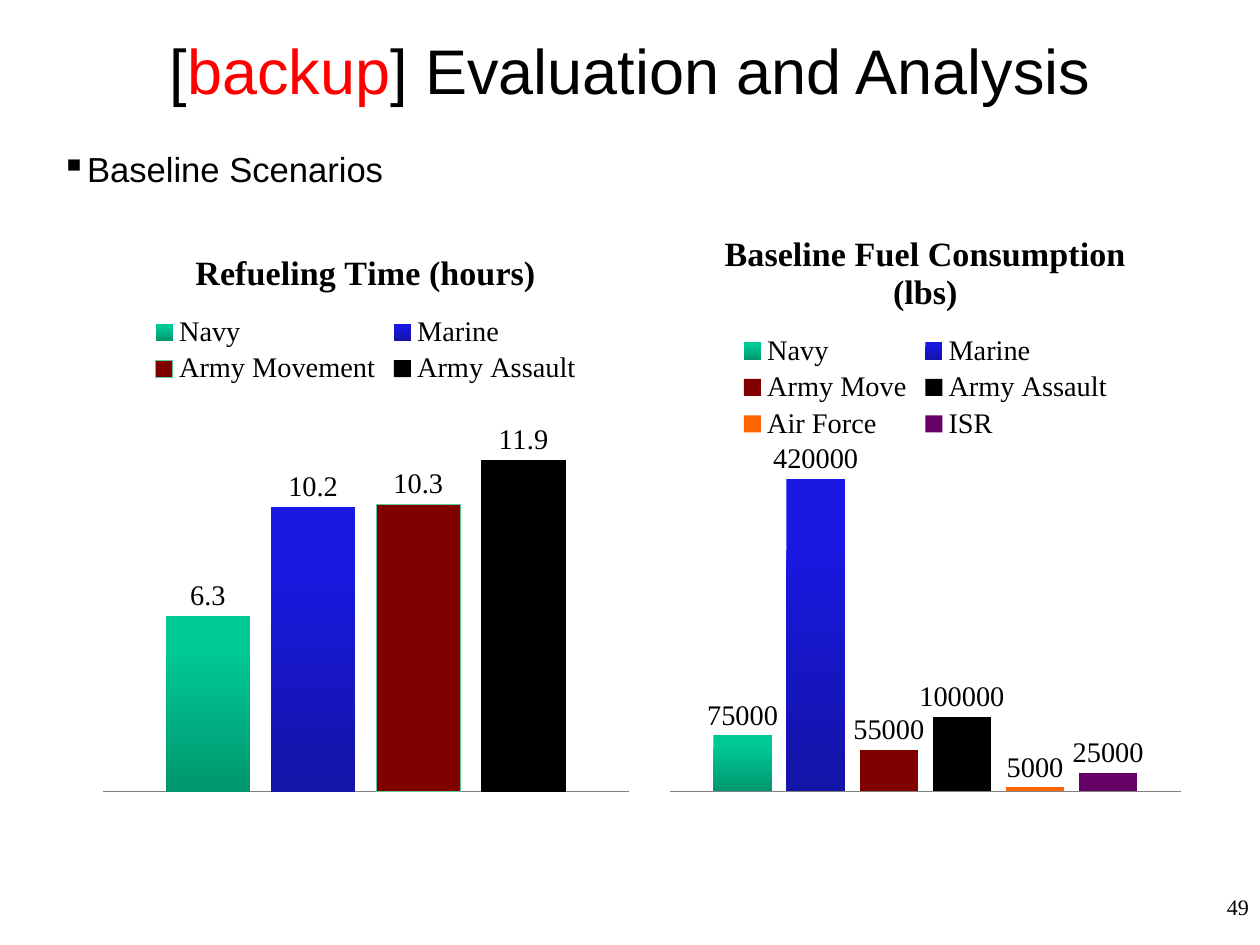
from lxml.etree import SubElement
from pptx import Presentation
from pptx.chart.data import CategoryChartData
from pptx.dml.color import RGBColor
from pptx.enum.chart import (XL_CHART_TYPE, XL_LABEL_POSITION, XL_LEGEND_POSITION,
                             XL_TICK_LABEL_POSITION, XL_TICK_MARK)
from pptx.enum.text import MSO_ANCHOR, MSO_AUTO_SIZE, PP_ALIGN
from pptx.oxml.ns import qn
from pptx.util import Emu, Pt

SANS, SERIF = "Arial", "Times New Roman"
BLACK, RED, AXIS_GRAY, OUTLINE_GREEN = "000000", "FF0000", "808080", "60C99C"
# One colour is a solid fill; two run from the top of the column to its foot
NAVY, MARINE = ("00C896", "00966E"), ("1818E2", "1414A6")
MAROON, ORANGE, PURPLE = ("800000",), ("FF6600",), ("660066",)

REFUELING = [("Navy", 6.3, NAVY), ("Marine", 10.2, MARINE),
             ("Army Movement", 10.3, MAROON), ("Army Assault", 11.9, (BLACK,))]
FUEL = [("Navy", 75000, NAVY), ("Marine", 420000, MARINE),
        ("Army Move", 55000, MAROON), ("Army Assault", 100000, (BLACK,)),
        ("Air Force", 5000, ORANGE), ("ISR", 25000, PURPLE)]


def px(length):
    """100 px to the inch."""
    return Emu(length * 9144)


def color(hex_code):
    return RGBColor.from_string(hex_code)


def style_font(font, face, size, hex_code=BLACK, bold=False):
    font.name, font.size, font.bold = face, Pt(size), bold
    font.color.rgb = color(hex_code)


def add_run(paragraph, text, face, size, hex_code=BLACK):
    run = paragraph.add_run()
    run.text = text
    style_font(run.font, face, size, hex_code)


def set_frame(shape, box, inset_x=0, inset_y=0):
    shape.left, shape.top, shape.width, shape.height = map(px, box)
    frame = shape.text_frame
    frame.margin_left = frame.margin_right = px(inset_x)
    frame.margin_top = frame.margin_bottom = px(inset_y)
    frame.word_wrap = True
    frame.auto_size = MSO_AUTO_SIZE.NONE
    frame.vertical_anchor = MSO_ANCHOR.TOP
    return frame.paragraphs[0]


def add_text(slide, box, **insets):
    return set_frame(slide.shapes.add_textbox(*map(px, box)), box, **insets)


def add_bullet(paragraph, symbol):
    SubElement(paragraph._p.get_or_add_pPr(), qn("a:buChar"), char=symbol)


def fill_column(fill, colors):
    if len(colors) == 1:
        fill.solid()
        fill.fore_color.rgb = color(colors[0])
        return
    fill.gradient()
    fill.gradient_angle = 270
    for stop, hex_code, position in zip(fill.gradient_stops, colors, (0.2, 1)):
        stop.color.rgb = color(hex_code)
        stop.position = position


def add_column_chart(slide, box, title, forces, top_value, outlined=None):
    data = CategoryChartData()
    data.categories = ["1"]
    for name, value, _ in forces:
        data.add_series(name, [value])
    chart = slide.shapes.add_chart(
        XL_CHART_TYPE.COLUMN_CLUSTERED, *map(px, box), data).chart
    style_font(chart.font, SERIF, 18)

    # Title and legend
    chart.has_title = True
    heading = chart.chart_title.text_frame.paragraphs[0].add_run()
    heading.text = title
    style_font(heading.font, SERIF, 21.6, bold=True)
    chart.has_legend = True
    chart.legend.position = XL_LEGEND_POSITION.TOP
    chart.legend.include_in_layout = False
    style_font(chart.legend.font, SERIF, 18)

    # Axes
    values = chart.value_axis
    values.visible = values.has_major_gridlines = False
    values.minimum_scale, values.maximum_scale = 0, top_value
    baseline = chart.category_axis
    baseline.tick_label_position = XL_TICK_LABEL_POSITION.NONE
    baseline.major_tick_mark = baseline.minor_tick_mark = XL_TICK_MARK.NONE
    baseline.format.line.color.rgb = color(AXIS_GRAY)
    baseline.format.line.width = Pt(0.75)

    # Columns
    plot = chart.plots[0]
    plot.gap_width, plot.overlap, plot.vary_by_categories = 150, -25, False
    for column, (name, _, colors) in zip(plot.series, forces):
        fill_column(column.format.fill, colors)
        if name == outlined:
            column.format.line.color.rgb = color(OUTLINE_GREEN)
            column.format.line.width = Pt(0.75)
        else:
            column.format.line.fill.background()
        labels = column.data_labels
        labels.show_value = True
        labels.position = XL_LABEL_POSITION.OUTSIDE_END
        style_font(labels.font, SERIF, 18)


def main():
    deck = Presentation()
    deck.slide_width, deck.slide_height = px(1111), px(833)
    slide = deck.slides.add_slide(deck.slide_layouts[5])

    # Title
    title = set_frame(slide.shapes.title, (27, 33, 1057, 100))
    title.alignment, title.line_spacing = PP_ALIGN.CENTER, 0.95
    for text, hex_code in [("[", BLACK), ("backup", RED),
                           ("] Evaluation and Analysis", BLACK)]:
        add_run(title, text, SANS, 40, hex_code)

    # Topic
    topic = add_text(slide, (54, 133, 1057, 50))
    topic.line_spacing = 0.95
    add_bullet(topic, "▪")
    add_run(topic, "Baseline Scenarios", SANS, 22)

    # Charts
    add_column_chart(slide, (81, 200, 483, 508), "Refueling Time (hours)",
                     REFUELING, 14, outlined="Army Movement")
    add_column_chart(slide, (581, 183, 470, 525),
                     "Baseline Fuel Consumption (lbs)", FUEL, 450000)

    # Page number
    page = add_text(slide, (879, 783, 232, 50), inset_x=10, inset_y=5)
    page.alignment = PP_ALIGN.RIGHT
    add_run(page, "49", SERIF, 14)

    deck.save("out.pptx")


if __name__ == "__main__":
    main()
